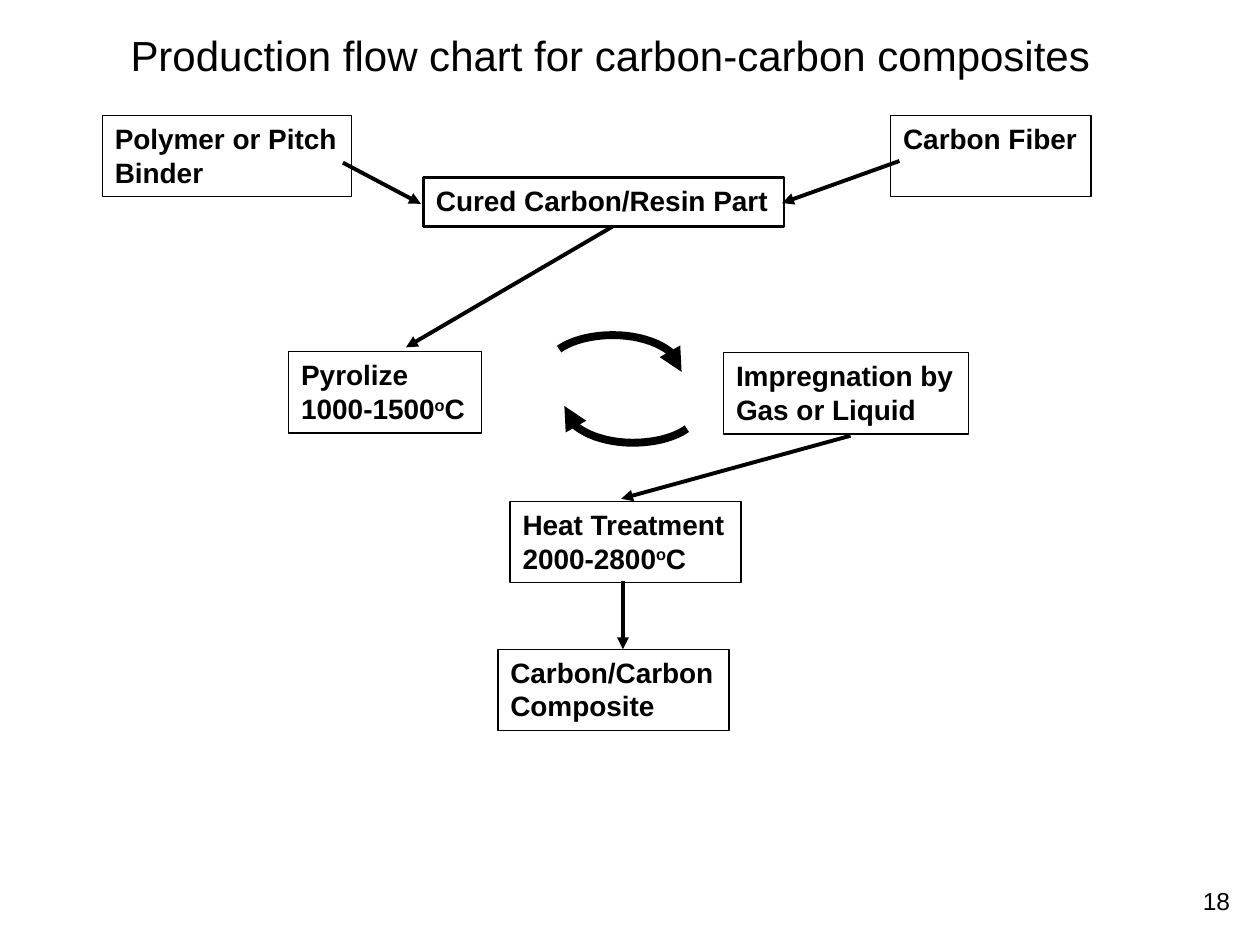
"""Build the slide with the production flow chart for carbon-carbon composites."""
from lxml import etree
from pptx import Presentation
from pptx.dml.color import RGBColor
from pptx.enum import shapes, text
from pptx.oxml import ns
from pptx.util import Pt

COLORS = {"ink": "000000", "paper": "FFFFFF"}
FONT = "Arial"

STEPS = [
    (184, 35.5, 206, 28, 1.5, ["Cured Carbon/Resin Part"]),
    (107, 135, 110, 46.5, 0.75, ["Pyrolize", "1000-1500^o^C"]),
    (355.5, 135.5, 140, 46.5, 0.75, ["Impregnation by", "Gas or Liquid"]),
    (233.5, 220.5, 132, 46.5, 0.75, ["Heat Treatment", "2000-2800^o^C"]),
    (226.5, 305, 132, 46.5, 0.75, ["Carbon/Carbon", "Composite"]),
    (0.5, 0, 142.5, 46.5, 0.75, ["Polymer or Pitch", "Binder"]),
    (451, 0, 114.5, 46.5, 0.75, ["Carbon Fiber"]),
]
FLOWS = [
    (456, 26, 389, 50),
    (138, 27, 182.5, 50.5),
    (292, 63.5, 174, 132.5),
    (428, 183, 297, 219),
    (298, 266, 298, 305),
]
ARC_SIZE = (70, 21)
ARC_CURVES = [
    [(0, 8), (7, 3), (18.5, 0), (31, 0)],
    [(31, 0), (52, 0), (70, 9.5), (70, 21)],
]


def ink():
    """Return the colour of text and lines."""
    return RGBColor.from_string(COLORS["ink"])


def style_line(line, width, arrow=False):
    """Set a line's colour and width, with an optional arrowhead at its end."""
    line.color.rgb = ink()
    line.width = Pt(width)
    if arrow:
        properties = line._get_or_add_ln()
        etree.SubElement(properties, ns.qn("a:tailEnd"), type="triangle")


def write(frame, lines, size, bold=False, align=text.PP_ALIGN.LEFT, wrap=False):
    """Fill a frame with lines in which ^ marks enclose superscripts."""
    frame.word_wrap = wrap
    frame.vertical_anchor = text.MSO_ANCHOR.TOP
    for index, line in enumerate(lines):
        paragraph = frame.add_paragraph() if index else frame.paragraphs[0]
        paragraph.alignment = align
        for part, words in enumerate(line.split("^")):
            run = paragraph.add_run()
            run.text = words
            run.font.name, run.font.size, run.font.bold = FONT, Pt(size), bold
            run.font.color.rgb = ink()
            if part % 2:
                run._r.get_or_add_rPr().set("baseline", "30000")


def add_label(slide, left, top, width, height, words, size, **options):
    """Add a plain text label."""
    label = slide.shapes.add_textbox(Pt(left), Pt(top), Pt(width), Pt(height))
    write(label.text_frame, [words], size, **options)


def add_step(slide, left, top, width, height, border, lines):
    """Add one outlined process step."""
    step = slide.shapes.add_shape(
        shapes.MSO_SHAPE.RECTANGLE, Pt(left), Pt(top), Pt(width), Pt(height))
    step.shadow.inherit = False
    step.fill.background()
    style_line(step.line, border)
    write(step.text_frame, lines, 16, bold=True)


def add_flow(slide, start_x, start_y, end_x, end_y):
    """Add a straight arrow between two steps."""
    flow = slide.shapes.add_connector(
        shapes.MSO_CONNECTOR.STRAIGHT, Pt(start_x), Pt(start_y), Pt(end_x), Pt(end_y))
    style_line(flow.line, 2.25, arrow=True)
    etree.SubElement(flow._element.spPr, ns.qn("a:effectLst"))


def curve_point(controls, t):
    """Return the point at t on a cubic curve."""
    weights = ((1 - t) ** 3, 3 * t * (1 - t) ** 2, 3 * t ** 2 * (1 - t), t ** 3)
    return tuple(sum(w * c[axis] for w, c in zip(weights, controls)) for axis in (0, 1))


def add_cycle_arc(slide, left, top, turned=False):
    """Add one curved arrow of the cycle, optionally turned half way round."""
    points = [curve_point(curve, step / 16) for curve in ARC_CURVES for step in range(17)]
    if turned:
        points = [(ARC_SIZE[0] - x, ARC_SIZE[1] - y) for x, y in points]
    points = [(Pt(left + x), Pt(top + y)) for x, y in points]
    builder = slide.shapes.build_freeform(*points[0])
    builder.add_line_segments(points[1:], close=False)
    arc = builder.convert_to_shape()
    arc.shadow.inherit = False
    arc.fill.background()
    style_line(arc.line, 4.5, arrow=True)


def add_flow_chart(slide, left, top):
    """Place the steps, arrows and cycle relative to the chart's corner."""
    for x, y, *rest in STEPS:
        add_step(slide, left + x, top + y, *rest)
    for x1, y1, x2, y2 in FLOWS:
        add_flow(slide, left + x1, top + y1, left + x2, top + y2)
    add_cycle_arc(slide, left + 261.5, top + 125.5)
    add_cycle_arc(slide, left + 264.5, top + 166, turned=True)


def main():
    """Build and save the slide."""
    presentation = Presentation()
    presentation.slide_width, presentation.slide_height = Pt(720), Pt(540)
    slide = presentation.slides.add_slide(presentation.slide_layouts[6])
    slide.background.fill.solid()
    slide.background.fill.fore_color.rgb = RGBColor.from_string(COLORS["paper"])
    add_flow_chart(slide, 58, 66)
    add_label(slide, 67.5, 13.5, 563, 36,
              "Production flow chart for carbon-carbon composites", 24)
    add_label(slide, 666, 502.5, 44, 26, "18", 14,
              align=text.PP_ALIGN.RIGHT, wrap=True)
    presentation.save("out.pptx")


if __name__ == "__main__":
    main()
